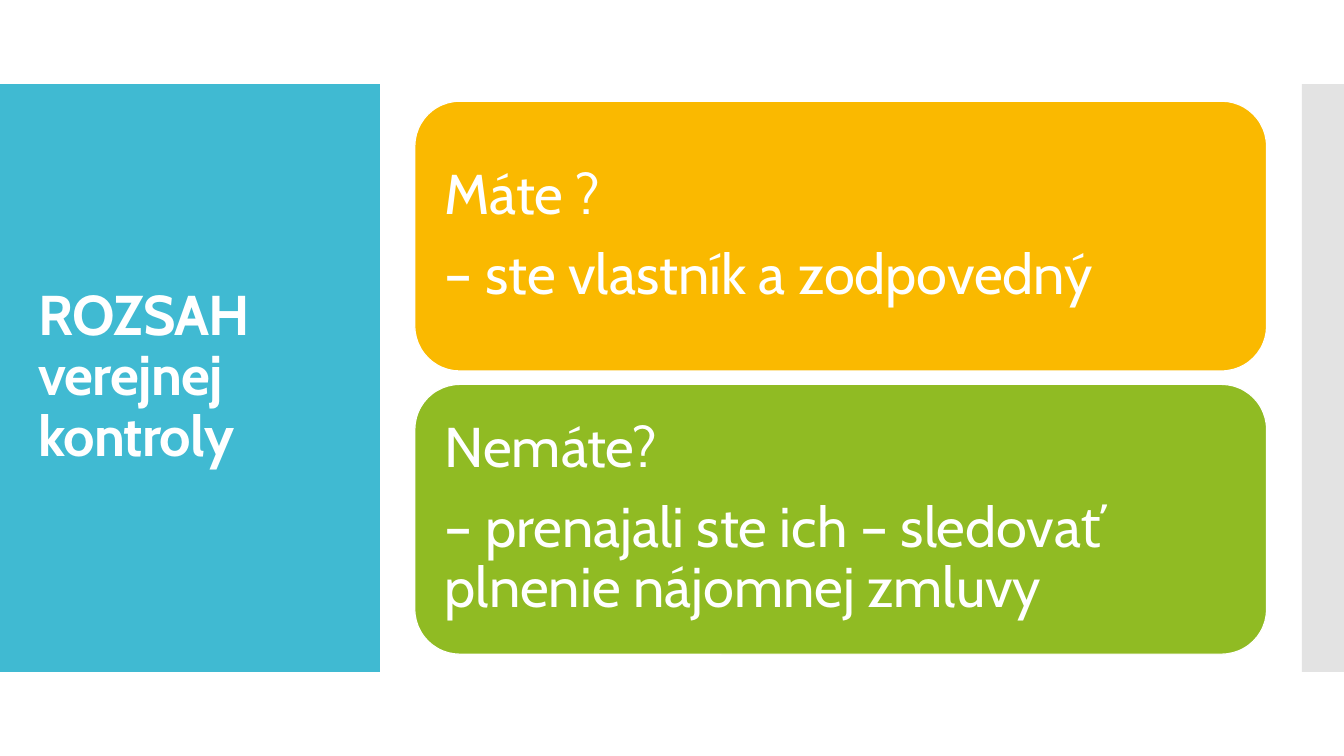
"""Build the slide on the scope of public control."""
from lxml import etree
from pptx import Presentation
from pptx.dml.color import RGBColor
from pptx.enum.shapes import MSO_SHAPE
from pptx.enum.text import MSO_ANCHOR, PP_ALIGN
from pptx.oxml.ns import qn
from pptx.util import Pt

RECT, ROUNDED = MSO_SHAPE.RECTANGLE, MSO_SHAPE.ROUNDED_RECTANGLE
MIDDLE, LEFT = MSO_ANCHOR.MIDDLE, PP_ALIGN.LEFT
WHITE = RGBColor(0xFF, 0xFF, 0xFF)
TEAL = RGBColor(0x40, 0xBA, 0xD2)
GREY = RGBColor(0xC8, 0xC8, 0xC8)
AMBER = RGBColor(0xFA, 0xB9, 0x00)
GREEN = RGBColor(0x90, 0xBB, 0x23)

HEADING = "ROZSAH\vverejnej kontroly"
ANSWERS = [
    (AMBER, ["Máte ?", "– ste vlastník a zodpovedný"]),
    (GREEN, ["Nemáte?", "– prenajali ste ich – sledovať plnenie nájomnej zmluvy"]),
]

SLIDE_WIDTH, SLIDE_HEIGHT = 960, 540
BAND_TOP, BAND_HEIGHT = 60, 420
SIDE_WIDTH, EDGE_WIDTH = 271.3, 30
HEADING_BOX = (20.2, 88.6, 231.8, 362.2)
CARD_LEFT, CARD_TOP, CARD_WIDTH, CARD_HEIGHT = 296.3, 72.3, 608.4, 192.7
CARD_STEP = 202.3
CARD_INSET = 12
FONT = {"name": "Cabin", "size": Pt(40)}


def set_all(target, values):
    for key, value in values.items():
        setattr(target, key, value)


def add_block(slide, kind, box, fill):
    block = slide.shapes.add_shape(kind, *map(Pt, box))
    block.shadow.inherit = False
    block.fill.solid()
    block.fill.fore_color.rgb = fill
    block.line.fill.background()
    return block


def write(frame, paragraphs, inset, space_after, bold):
    set_all(frame, {"word_wrap": True, "vertical_anchor": MIDDLE})
    set_all(frame, {f"margin_{side}": Pt(inset[side]) for side in inset})
    frame.text = "\n".join(paragraphs)
    for paragraph in frame.paragraphs:
        set_all(paragraph, {"alignment": LEFT, "line_spacing": 0.9,
                            "space_before": Pt(0), "space_after": Pt(space_after)})
        for run in paragraph.runs:
            set_all(run.font, {**FONT, "bold": bold})
            run.font.color.rgb = WHITE


def add_heading(slide):
    heading = slide.shapes.title
    set_all(heading, dict(zip(("left", "top", "width", "height"), map(Pt, HEADING_BOX))))
    inset = {"left": 7.2, "right": 7.2, "top": 3.6, "bottom": 3.6}
    write(heading.text_frame, [HEADING], inset, 0, True)
    for run in heading.text_frame.paragraphs[0].runs:
        run.font.element.set("spc", "-60") if hasattr(run.font, "element") else None
    for properties in heading.element.iter(qn("a:rPr")):
        properties.set("spc", "-60")
    heading.element.getparent().append(heading.element)


def add_answer(slide, row, fill, paragraphs):
    box = (CARD_LEFT, CARD_TOP + row * CARD_STEP, CARD_WIDTH, CARD_HEIGHT)
    card = add_block(slide, ROUNDED, box, fill)
    card.line.color.rgb = WHITE
    card.line.width = Pt(0.85)
    inset = dict.fromkeys(("left", "right", "top", "bottom"), CARD_INSET)
    write(card.text_frame, paragraphs, inset, 14, False)


def main():
    deck = Presentation()
    set_all(deck, {"slide_width": Pt(SLIDE_WIDTH), "slide_height": Pt(SLIDE_HEIGHT)})
    slide = deck.slides.add_slide(deck.slide_layouts[5])
    add_block(slide, RECT, (0, BAND_TOP, SIDE_WIDTH, BAND_HEIGHT), TEAL)
    edge_box = (SLIDE_WIDTH - EDGE_WIDTH, BAND_TOP, EDGE_WIDTH, BAND_HEIGHT)
    edge = add_block(slide, RECT, edge_box, GREY)
    edge_color = next(edge.element.spPr.iter(qn("a:srgbClr")))
    etree.SubElement(edge_color, qn("a:alpha"), val="50000")
    add_heading(slide)
    for row, (fill, paragraphs) in enumerate(ANSWERS):
        add_answer(slide, row, fill, paragraphs)
    deck.save("out.pptx")


if __name__ == "__main__":
    main()
